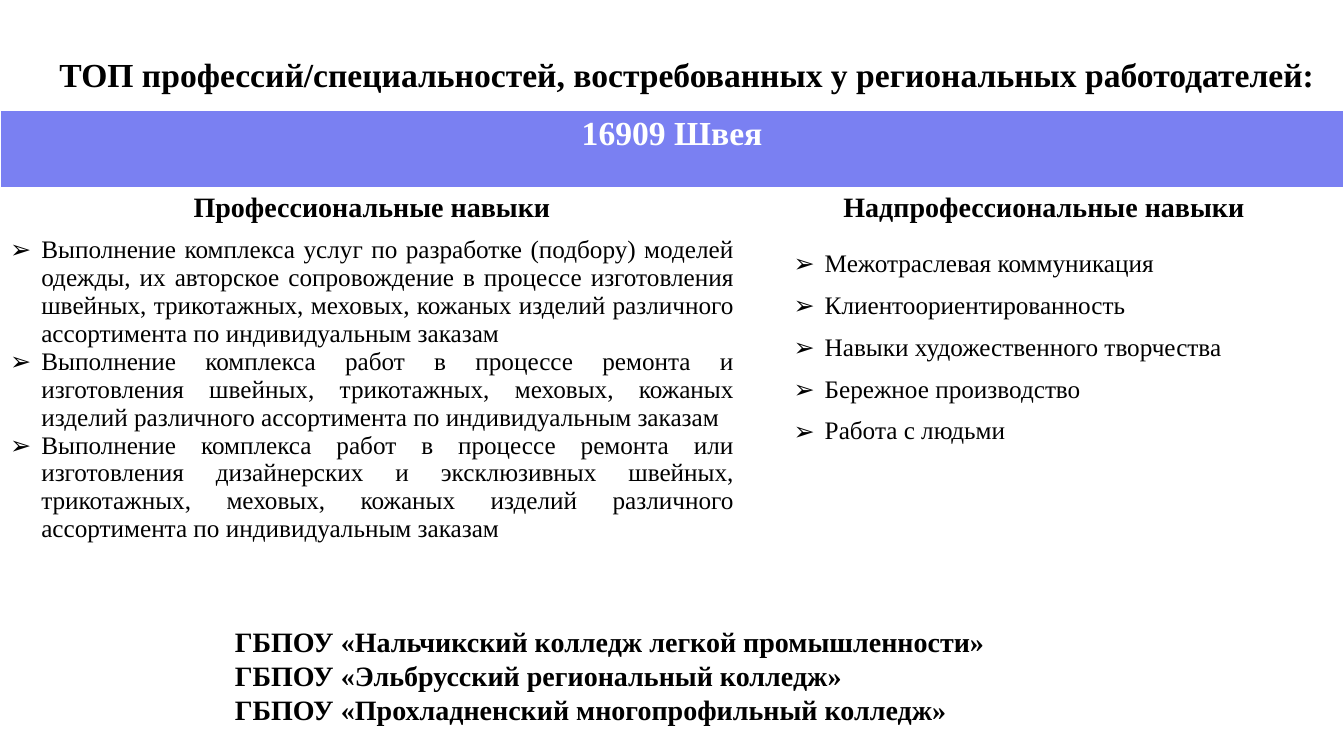
from dataclasses import dataclass
from lxml.etree import SubElement
from pptx import Presentation
from pptx.dml.color import RGBColor
from pptx.enum.text import PP_ALIGN
from pptx.oxml.ns import qn
from pptx.util import Inches, Pt


@dataclass(frozen=True)
class Theme:
    font: str = "Times New Roman"
    dark: str = "000000"
    light: str = "FFFFFF"
    band: str = "7A80F2"
    title: int = 24
    head: int = 20
    body: int = 18


THEME = Theme()

TITLE = "ТОП профессий/специальностей, востребованных у региональных работодателей:"
JOB = "16909 Швея"
HEADS = ["Профессиональные навыки", "Надпрофессиональные навыки"]
SKILLS = [
    "Выполнение комплекса услуг по разработке (подбору) моделей одежды, их авторское "
    "сопровождение в процессе изготовления швейных, трикотажных, меховых, кожаных "
    "изделий различного ассортимента по индивидуальным заказам",
    "Выполнение комплекса работ в процессе ремонта и изготовления швейных, трикотажных, "
    "меховых, кожаных изделий различного ассортимента по индивидуальным заказам",
    "Выполнение комплекса работ в процессе ремонта или изготовления дизайнерских и "
    "эксклюзивных швейных, трикотажных, меховых, кожаных изделий различного "
    "ассортимента по индивидуальным заказам",
]
SOFT = [
    "Межотраслевая коммуникация",
    "Клиентоориентированность",
    "Навыки художественного творчества",
    "Бережное производство",
    "Работа с людьми",
]
SCHOOLS = [
    "ГБПОУ «Нальчикский колледж легкой промышленности»",
    "ГБПОУ «Эльбрусский региональный колледж»",
    "ГБПОУ «Прохладненский многопрофильный колледж»",
]


def write(frame, lines, size, color=THEME.dark, bold=True, align=PP_ALIGN.LEFT,
          indent=None, spacing=None):
    """Fill a text frame; an indent turns its lines into bullets."""
    frame.word_wrap = True
    frame.text = "\n".join(lines)
    for para in frame.paragraphs:
        para.alignment = align
        if spacing:
            para.line_spacing = spacing
        if indent:
            props = para._p.get_or_add_pPr()
            props.set("marL", str(Inches(indent)))
            props.set("indent", str(Inches(-0.31)))
            SubElement(props, qn("a:buFont"), typeface="Arial")
            SubElement(props, qn("a:buChar"), char="➢")
        for run in para.runs:
            font = run.font
            font.name, font.size, font.bold = THEME.font, Pt(size), bold
            font.color.rgb = RGBColor.from_string(color)


def add_text(slide, box, lines, size):
    frame = slide.shapes.add_textbox(*map(Inches, box)).text_frame
    write(frame, lines, size)


def edge(cell, *sides):
    """Draw thin light borders on the named sides."""
    props = cell._tc.get_or_add_tcPr()
    for spot, side in enumerate(sides):
        line = SubElement(props, qn(f"a:{side}"), w=str(Pt(1)))
        fill = SubElement(line, qn("a:solidFill"))
        SubElement(fill, qn("a:srgbClr"), val=THEME.light)
        props.remove(line)
        props.insert(spot, line)


def add_skills(slide, box):
    left, top, width, height = box
    table = slide.shapes.add_table(3, 2, *map(Inches, box)).table
    split, band, head = 7.38, 0.76, 0.43
    for col, size in zip(table.columns, (split, width - split)):
        col.width = Inches(size)
    for row, size in zip(table.rows, (band, head, height - band - head)):
        row.height = Inches(size)
    for cell in table.iter_cells():
        cell.fill.background()

    # Job band
    job = table.cell(0, 0)
    job.merge(table.cell(0, 1))
    job.fill.solid()
    job.fill.fore_color.rgb = RGBColor.from_string(THEME.band)
    edge(job, "lnL", "lnR", "lnT")
    write(job.text_frame, [JOB], THEME.title, THEME.light, align=PP_ALIGN.CENTER)

    # Skill columns
    columns = zip(HEADS, (SKILLS, SOFT), (0.31, 0.7), (None, 1.5))
    for col, (name, lines, indent, spacing) in enumerate(columns):
        write(table.cell(1, col).text_frame, [name], THEME.head, align=PP_ALIGN.CENTER)
        write(table.cell(2, col).text_frame, lines, THEME.body, bold=False,
              align=PP_ALIGN.JUSTIFY, indent=indent, spacing=spacing)


def main():
    deck = Presentation()
    deck.slide_width, deck.slide_height = Inches(13.33), Inches(7.5)
    slide = deck.slides.add_slide(deck.slide_layouts[6])
    add_text(slide, (0.49, 0.49, 13.12, 0.5), [TITLE], THEME.title)
    add_skills(slide, (0, 1.1, 13.33, 4.9))
    add_text(slide, (2.23, 6.15, 8.88, 1.11), SCHOOLS, THEME.head)
    deck.save("out.pptx")


if __name__ == "__main__":
    main()
